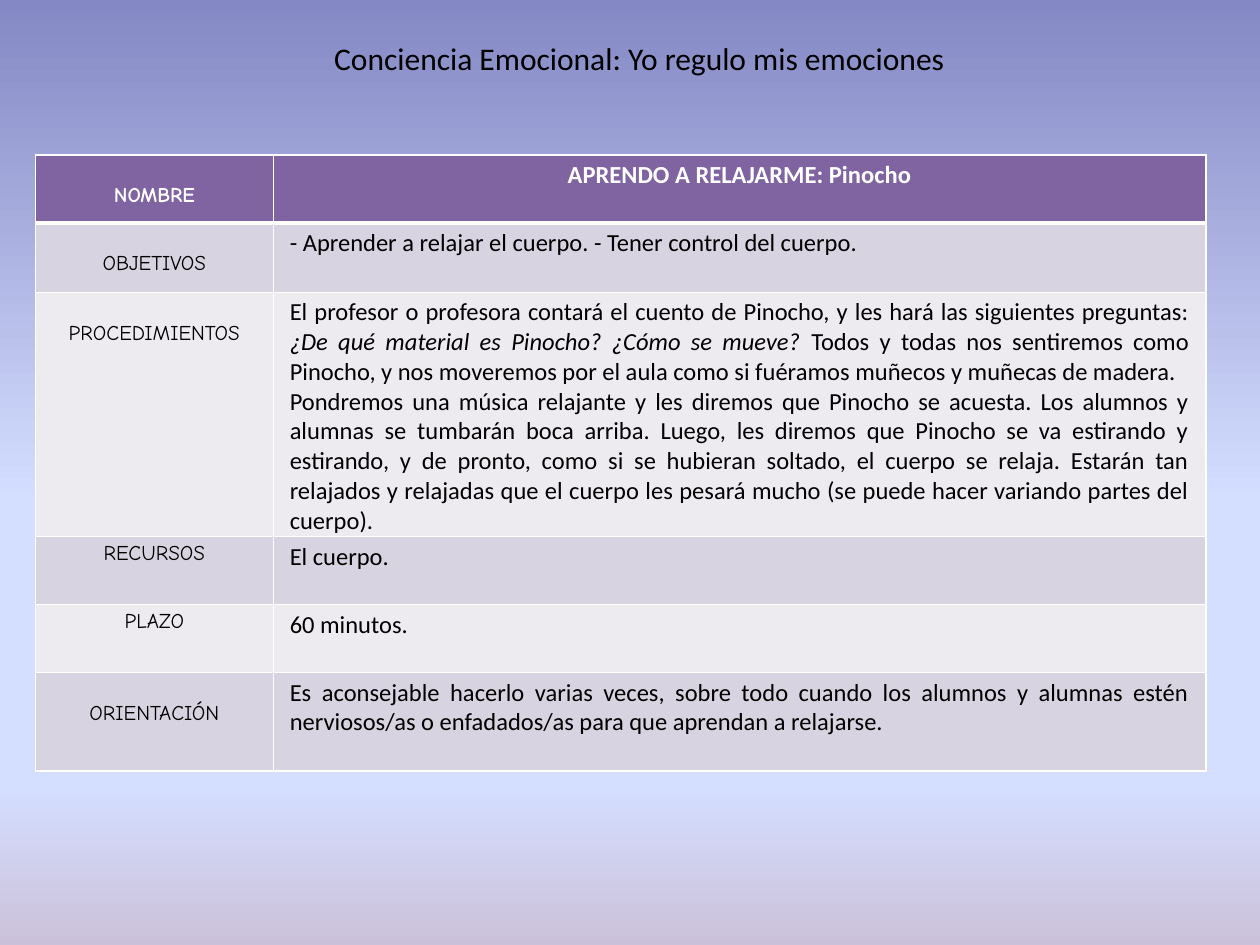
from lxml.etree import SubElement
from pptx import Presentation
from pptx.dml.color import RGBColor
from pptx.enum.text import MSO_ANCHOR, PP_ALIGN
from pptx.oxml import parse_xml
from pptx.oxml.ns import nsdecls, qn
from pptx.util import Inches, Pt

COLORS = {"header": "8064A2", "dark": "D8D3E0", "light": "EDEAF0",
          "white": "FFFFFF", "black": "000000"}
BACKGROUND = [(0, "8488C4"), (53, "D4DEFF"), (83, "D4DEFF"), (100, "CCC1DA")]
TITLE = "Conciencia Emocional: Yo regulo mis emociones"

# label, top inset of the label, row height, paragraphs as lists of (text, italic)
LOW, HIGH = 0.23, 0.04
ROWS = [
    ("NOMBRE", LOW, 0.54, [[("APRENDO A RELAJARME: Pinocho", False)]]),
    ("OBJETIVOS", LOW, 0.55,
     [[("- Aprender a relajar el cuerpo. - Tener control del cuerpo.", False)]]),
    ("PROCEDIMIENTOS", LOW, 1.94, [
        [("El profesor o profesora contará el cuento de Pinocho, y les hará las "
          "siguientes preguntas: ", False),
         ("¿De qué material es Pinocho? ¿Cómo se mueve? ", True),
         ("Todos y todas nos sentiremos como Pinocho, y nos moveremos por el aula "
          "como si fuéramos muñecos y muñecas de madera.", False)],
        [("Pondremos una música relajante y les diremos que Pinocho se acuesta. Los "
          "alumnos y alumnas se tumbarán boca arriba. Luego, les diremos que Pinocho "
          "se va estirando y estirando, y de pronto, como si se hubieran soltado, el "
          "cuerpo se relaja. Estarán tan relajados y relajadas que el cuerpo les "
          "pesará mucho (se puede hacer variando partes del cuerpo).", False)]]),
    ("RECURSOS", HIGH, 0.54, [[("El cuerpo.", False)]]),
    ("PLAZO", HIGH, 0.54, [[("60 minutos.", False)]]),
    ("ORIENTACIÓN", LOW, 0.78,
     [[("Es aconsejable hacerlo varias veces, sobre todo cuando los alumnos y alumnas "
        "estén nerviosos/as o enfadados/as para que aprendan a relajarse.", False)]]),
]
COLUMNS = (1.89, 7.4)
TABLE_LEFT, TABLE_TOP = 0.28, 1.23


def write(tf, paragraphs, size, font="Calibri", color="black", bold=False,
          align=PP_ALIGN.CENTER):
    for i, runs in enumerate(paragraphs):
        p = tf.paragraphs[0] if i == 0 else tf.add_paragraph()
        p.alignment = align
        for text, italic in runs:
            r = p.add_run()
            r.text = text
            r.font.size, r.font.name = Pt(size), font
            r.font.bold, r.font.italic = bold, italic
            r.font.color.rgb = RGBColor.from_string(COLORS[color])


def paint_background(s):
    fill = s.background.fill
    fill.gradient()
    fill.gradient_angle = 270
    stops = s.background._cSld.find(".//" + qn("a:gsLst"))
    for stop in list(stops):
        stops.remove(stop)
    for share, color in BACKGROUND:
        stop = SubElement(stops, qn("a:gs"), pos=str(share * 1000))
        SubElement(stop, qn("a:srgbClr"), val=color)


def set_borders(cell, **widths):
    tc_pr = cell._tc.get_or_add_tcPr()
    for i, side in enumerate("LRTB"):
        tc_pr.insert(i, parse_xml(
            f'<a:ln{side} {nsdecls("a")} w="{Pt(widths.get(side, 1))}"><a:solidFill>'
            f'<a:srgbClr val="{COLORS["white"]}"/></a:solidFill></a:ln{side}>'))


def add_activity_table(s):
    frame = s.shapes.add_table(
        len(ROWS), len(COLUMNS), Inches(TABLE_LEFT), Inches(TABLE_TOP),
        Inches(sum(COLUMNS)), Inches(sum(row[2] for row in ROWS)))
    table = frame.table
    table.horz_banding = False
    for column, width in zip(table.columns, COLUMNS):
        column.width = Inches(width)
    for i, (label, label_top, height, paragraphs) in enumerate(ROWS):
        table.rows[i].height = Inches(height)
        header = i == 0
        fill = "header" if header else ("dark" if i % 2 else "light")
        style = {"color": "white" if header else "black", "bold": header}
        name, detail = table.cell(i, 0), table.cell(i, 1)
        for cell, top in ((name, label_top), (detail, HIGH)):
            cell.margin_left = cell.margin_right = Inches(0.13)
            cell.margin_top, cell.margin_bottom = Inches(top), 0
            cell.fill.solid()
            cell.fill.fore_color.rgb = RGBColor.from_string(COLORS[fill])
            set_borders(cell, T=3 if i == 1 else 1, B=3 if header else 1)
        write(name.text_frame, [[(label, False)]], 12, font="Comic Neue", **style)
        write(detail.text_frame, paragraphs, 14,
              align=PP_ALIGN.CENTER if header else PP_ALIGN.JUSTIFY, **style)


def main():
    prs = Presentation()
    prs.slide_width, prs.slide_height = Inches(10), Inches(7.5)
    s = prs.slides.add_slide(prs.slide_layouts[5])
    paint_background(s)
    title = s.shapes.title
    title.left, title.top = Inches(2.32), Inches(0.26)
    title.width, title.height = Inches(5.51), Inches(0.4)
    title.text_frame.vertical_anchor = MSO_ANCHOR.TOP
    write(title.text_frame, [[(TITLE, False)]], 18)
    add_activity_table(s)
    prs.save("out.pptx")


if __name__ == "__main__":
    main()
